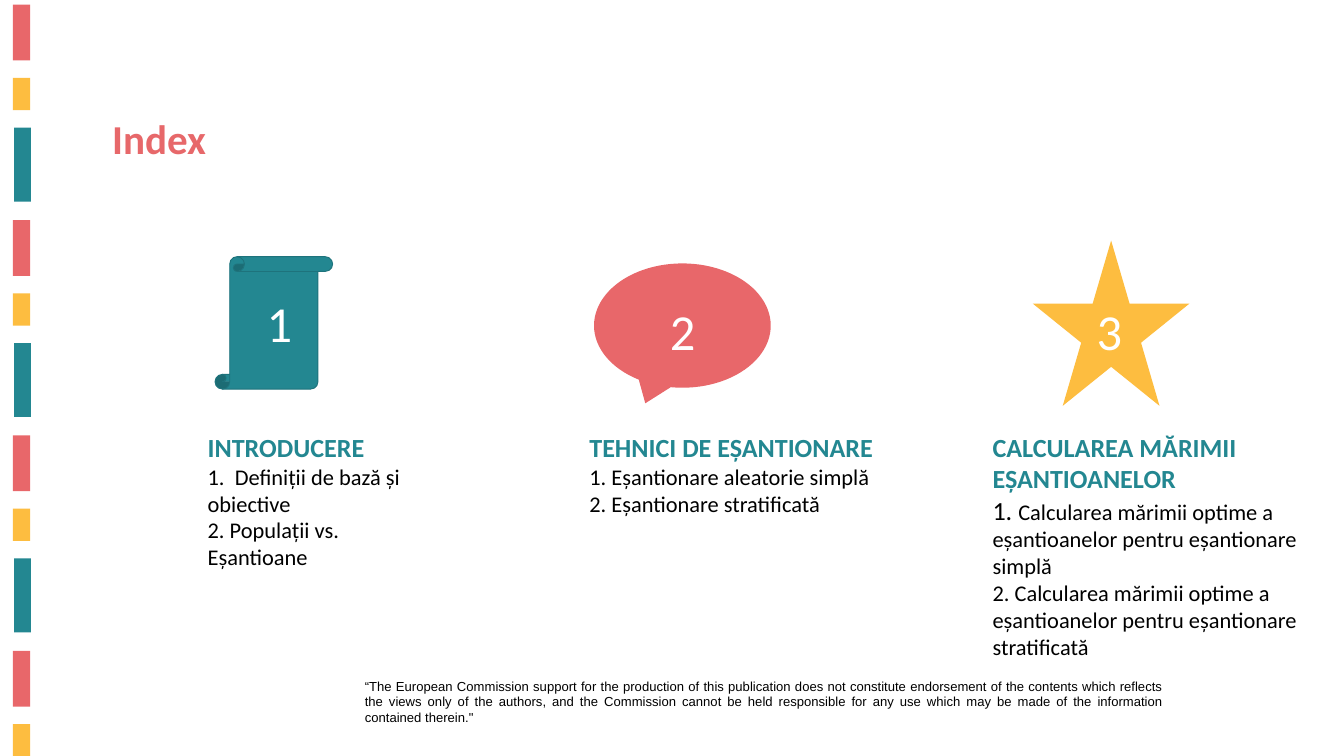
"""Build the index slide: three numbered icons, each above its topic list."""
import pptx
import pptx.util
import pptx.dml.color
import pptx.enum.shapes
import pptx.enum.text
import pptx.oxml.ns
import lxml.etree

KIND = pptx.enum.shapes.MSO_SHAPE
ALIGN = pptx.enum.text.PP_ALIGN
RED, GOLD, TEAL = "E8676A", "FDBD40", "238791"

deck = pptx.Presentation()
deck.slide_width = pptx.util.Inches(20)
deck.slide_height = pptx.util.Inches(11.25)
unit = deck.slide_width / 80


def paint(target, tone):
    if hasattr(target, "solid"):
        target.solid()
        target = target.fore_color
    target.rgb = pptx.dml.color.RGBColor.from_string(tone)


def write(box, spot, rows, align=ALIGN.LEFT):
    box.left, box.top, box.width, box.height = [int(n * unit) for n in spot]
    frame = box.text_frame
    frame.word_wrap = True
    frame.auto_size = pptx.enum.text.MSO_AUTO_SIZE.NONE
    frame.vertical_anchor = pptx.enum.text.MSO_ANCHOR.TOP
    frame.text = "\n".join(row[0] for row in rows)
    for para, (words, size, tone, bold, face) in zip(frame.paragraphs, rows):
        props = para._p.get_or_add_pPr()
        props.set("marL", "0")
        props.set("indent", "0")
        lxml.etree.SubElement(props, pptx.oxml.ns.qn("a:buNone"))
        para.alignment = align
        para.space_before = pptx.util.Pt(0)
        for run in para.runs:
            run.font.size = pptx.util.Pt(size)
            run.font.name = face
            run.font.bold = bold
            paint(run.font.color, tone)


slide = deck.slides.add_slide(deck.slide_layouts[4])
shapes = slide.shapes
holders = {holder.placeholder_format.idx: holder for holder in slide.placeholders}
spare = holders[4].element
spare.getparent().remove(spare)

stripes = [(0.76, 0.28, 1.04, 3.32, RED),
           (0.76, 4.64, 1.04, 1.92, GOLD),
           (0.84, 7.6, 1, 4.4, TEAL)]
for n in range(11):
    left, top, width, height, tone = stripes[n % 3]
    spot = [left, top + n // 3 * 12.82, width, height]
    stripe = shapes.add_shape(KIND.RECTANGLE, *[int(v * unit) for v in spot])
    stripe.shadow.inherit = False
    paint(stripe.fill, tone)
    stripe.line.fill.background()

write(holders[0], (6.28, 6.56, 27.08, 6.32),
      [("Index", 44, "E7686A", True, "Calibri")])

topics = [
    (KIND.VERTICAL_SCROLL, (12.8, 15.28, 7, 7.88), [0.125], TEAL,
     (15.48, 17.2, 6.32, 4.04), (11.96, 25.48, 13.68, 11.56),
     ["INTRODUCERE", "1.  Definiții de bază și obiective",
      "2. Populații vs. Eșantioane"]),
    (KIND.OVAL_CALLOUT, (35.36, 15.68, 10.52, 7.4), [-0.21, 0.625], RED,
     (39.48, 17.64, 4.32, 4.04), (34.68, 25.48, 18.2, 8.36),
     ["TEHNICI DE EȘANTIONARE", "1. Eșantionare aleatorie simplă",
      "2. Eșantionare stratificată"]),
    (KIND.STAR_5_POINT, (61.48, 14.32, 9.32, 9.84), [], GOLD,
     (64.88, 17.64, 6, 4.04), (58.68, 25.48, 19.6, 15.08),
     ["CALCULAREA MĂRIMII EȘANTIOANELOR",
      "1. Calcularea mărimii optime a eșantioanelor pentru eșantionare simplă",
      "2. Calcularea mărimii optime a eșantioanelor pentru eșantionare stratificată"]),
]
for n, (kind, spot, tweaks, tone, badge, area, lines) in enumerate(topics, 1):
    icon = shapes.add_shape(kind, *[int(v * unit) for v in spot])
    icon.shadow.inherit = False
    for k, tweak in enumerate(tweaks):
        icon.adjustments[k] = tweak
    paint(icon.fill, tone)
    if kind == KIND.VERTICAL_SCROLL:
        paint(icon.line.fill, "1E737C")
        icon.line.width = pptx.util.Pt(1)
    else:
        icon.line.fill.background()
    write(shapes.add_textbox(0, 0, 0, 0), badge,
          [(str(n), 54, "FFFFFF", False, "Calibri")])
    rows = [(lines[0], 28, TEAL, True, "Calibri")]
    rows += [(line, 24, "000000", False, "Calibri") for line in lines[1:]]
    write(holders[n], area, rows)

first = holders[3].text_frame.paragraphs[1]
first.runs[0].text = "1. "
first.runs[0].font.size = pptx.util.Pt(28)
rest = first.add_run()
rest.text = lines[1][3:]
rest.font.size = pptx.util.Pt(24)
rest.font.name = "Calibri"
rest.font.bold = False
paint(rest.font.color, "000000")

notice = ("“The European Commission support for the production of this publication "
          "does not constitute endorsement of the contents which reflects the views "
          "only of the authors, and the Commission cannot be held responsible for any "
          "use which may be made of the information contained therein.\"")
write(shapes.add_textbox(0, 0, 0, 0), (21.32, 40.16, 48.32, 3.24),
      [(notice, 14, "000000", False, "Arial")], ALIGN.JUSTIFY)

deck.save("out.pptx")
